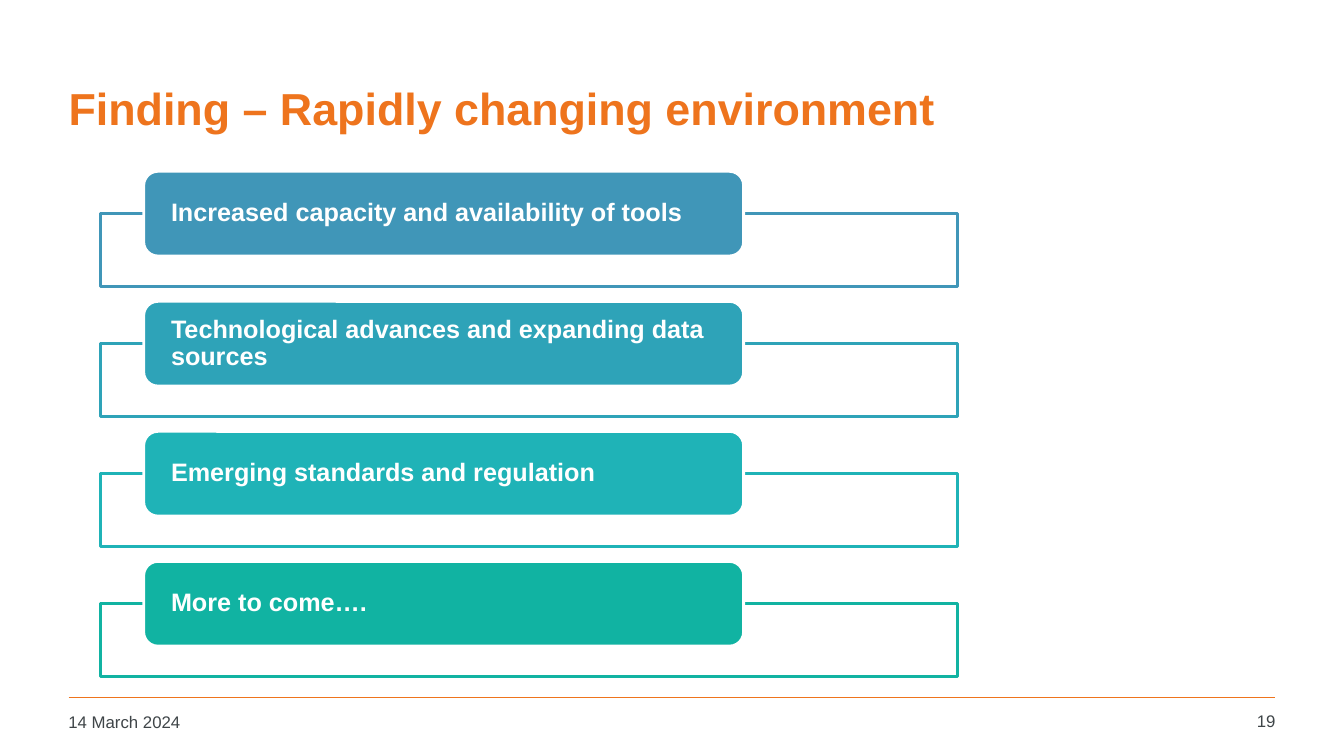
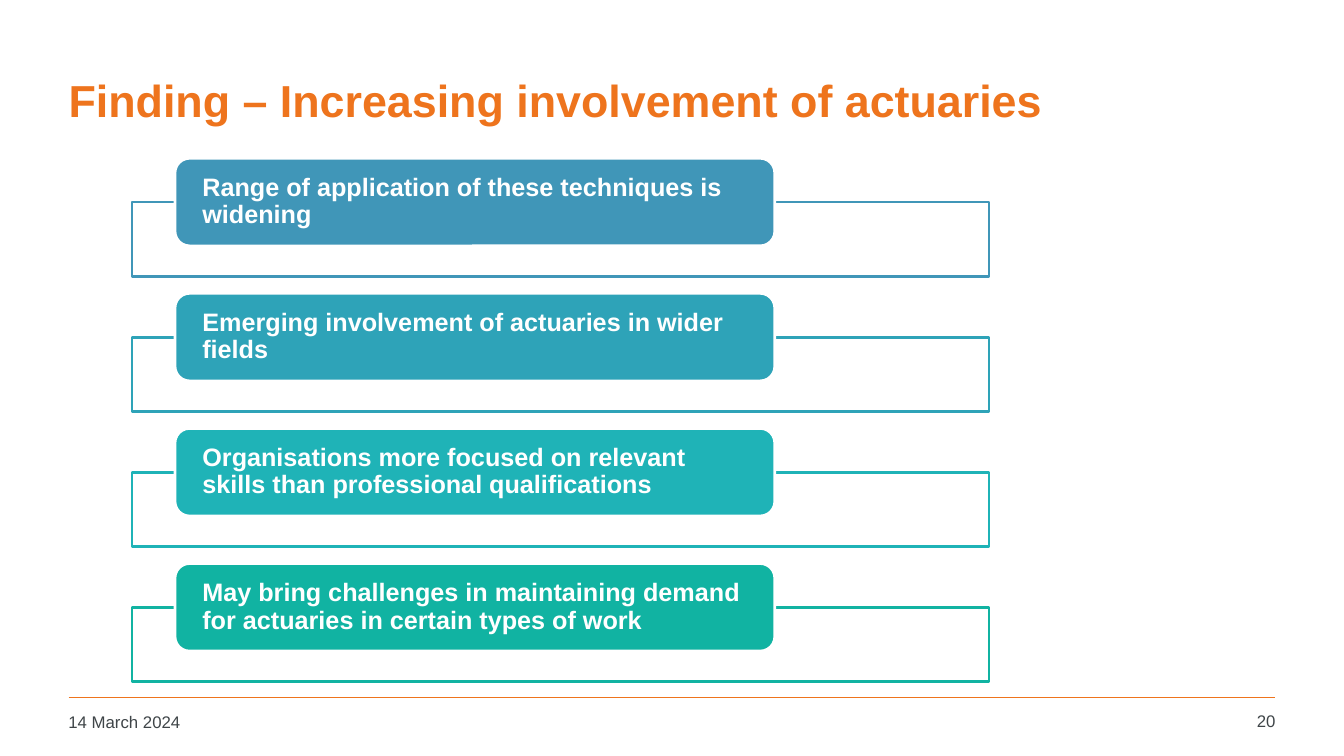
from lxml.etree import SubElement
from pptx import Presentation
from pptx.dml.color import RGBColor
from pptx.enum.shapes import MSO_CONNECTOR, MSO_SHAPE
from pptx.enum.text import MSO_ANCHOR, MSO_AUTO_SIZE, PP_ALIGN
from pptx.oxml.ns import qn
from pptx.util import Inches, Pt

COLORS = {"accent": "EE741D", "footer": "3F4548", "white": "FFFFFF"}
CARD_COLORS = ["4096B8", "2EA3B8", "1FB3B7", "11B3A2"]
FONT = "Arial"
TITLE_ONLY = 5
FRAME_WIDTH = 8.5
CARD_INDENT = 0.05 * FRAME_WIDTH
CARD_WIDTH = 0.7 * FRAME_WIDTH

FINDINGS = [
    {
        "number": 19,
        "title": "Finding – Rapidly changing environment",
        "title_height": 1.25,
        "left": 1.0, "top": 1.7, "pitch": 1.29,
        "card_height": 0.84, "frame_height": 0.72,
        "points": [
            "Increased capacity and availability of tools",
            "Technological advances and expanding data sources",
            "Emerging standards and regulation",
            "More to come….",
        ],
    },
    {
        "number": 20,
        "title": "Finding – Increasing involvement of actuaries",
        "title_height": 1.1,
        "left": 1.31, "top": 1.57, "pitch": 1.34,
        "card_height": 0.87, "frame_height": 0.74,
        "points": [
            "Range of application of these techniques is widening",
            "Emerging involvement of actuaries in wider fields",
            "Organisations more focused on relevant skills than professional qualifications",
            "May bring challenges in maintaining demand for actuaries in certain types of work",
        ],
    },
]


def rgb(color):
    return RGBColor.from_string(color)


class FindingDeck:
    def __init__(self):
        self.deck = Presentation()
        self.deck.slide_width = Inches(13.33)
        self.deck.slide_height = Inches(7.5)
        self.page = None

    def new_page(self, title, title_height, number):
        self.page = self.deck.slides.add_slide(self.deck.slide_layouts[TITLE_ONLY])
        self.title(title, title_height)
        self.rule()
        self.footer("14 March 2024", 0.58, 7.01, 2.94, PP_ALIGN.LEFT)
        self.footer(str(number), 11.81, 7.0, 0.94, PP_ALIGN.RIGHT)

    def set_text(self, shape, text, size, color, bold=False, align=PP_ALIGN.LEFT):
        frame = shape.text_frame
        frame.word_wrap = True
        frame.auto_size = MSO_AUTO_SIZE.NONE
        frame.text = text
        para = frame.paragraphs[0]
        para.alignment = align
        font = para.runs[0].font
        font.name, font.size, font.bold = FONT, Pt(size), bold
        font.color.rgb = rgb(color)
        return para

    def title(self, text, height):
        title = self.page.shapes.title
        title.left, title.top = Inches(0.58), Inches(0.44)
        title.width, title.height = Inches(12.09), Inches(height)
        title.text_frame.vertical_anchor = MSO_ANCHOR.MIDDLE
        self.set_text(title, text, 32, COLORS["accent"], bold=True)

    def rule(self):
        rule = self.page.shapes.add_connector(
            MSO_CONNECTOR.STRAIGHT,
            Inches(0.68), Inches(6.92), Inches(12.65), Inches(6.92))
        rule.line.color.rgb = rgb(COLORS["accent"])
        rule.line.width = Pt(1)
        SubElement(rule._element.spPr, qn("a:effectLst"))

    def footer(self, text, left, top, width, align):
        box = self.page.shapes.add_textbox(
            Inches(left), Inches(top), Inches(width), Inches(0.36))
        self.set_text(box, text, 12, COLORS["footer"], align=align)

    def panel(self, kind, left, top, width, height, fill, line):
        panel = self.page.shapes.add_shape(
            kind, Inches(left), Inches(top), Inches(width), Inches(height))
        panel.shadow.inherit = False
        panel.fill.solid()
        panel.fill.fore_color.rgb = rgb(fill)
        panel.line.color.rgb = rgb(line)
        panel.line.width = Pt(2)
        return panel

    def frame(self, left, top, height, color):
        frame = self.panel(MSO_SHAPE.RECTANGLE, left, top, FRAME_WIDTH, height,
                           COLORS["white"], color)
        fill_color = frame._element.spPr.find(qn("a:solidFill")).find(qn("a:srgbClr"))
        SubElement(fill_color, qn("a:alpha"), val="90000")

    def card(self, text, left, top, height, color):
        card = self.panel(MSO_SHAPE.ROUNDED_RECTANGLE, left, top, CARD_WIDTH, height,
                          color, COLORS["white"])
        text_frame = card.text_frame
        text_frame.margin_left = text_frame.margin_right = Inches(0.23)
        text_frame.margin_top = text_frame.margin_bottom = 0
        text_frame.vertical_anchor = MSO_ANCHOR.MIDDLE
        para = self.set_text(card, text, 18, COLORS["white"], bold=True)
        para.line_spacing = 0.9

    def card_list(self, points, left, top, pitch, card_height, frame_height):
        """Stack the cards, each frame starting at the middle of its card."""
        for index, (point, color) in enumerate(zip(points, CARD_COLORS)):
            card_top = top + index * pitch
            self.frame(left, card_top + card_height / 2, frame_height, color)
            self.card(point, left + CARD_INDENT, card_top, card_height, color)


def main():
    builder = FindingDeck()
    for finding in FINDINGS:
        builder.new_page(finding["title"], finding["title_height"], finding["number"])
        builder.card_list(finding["points"], finding["left"], finding["top"],
                          finding["pitch"], finding["card_height"],
                          finding["frame_height"])
    builder.deck.save("out.pptx")


if __name__ == "__main__":
    main()
